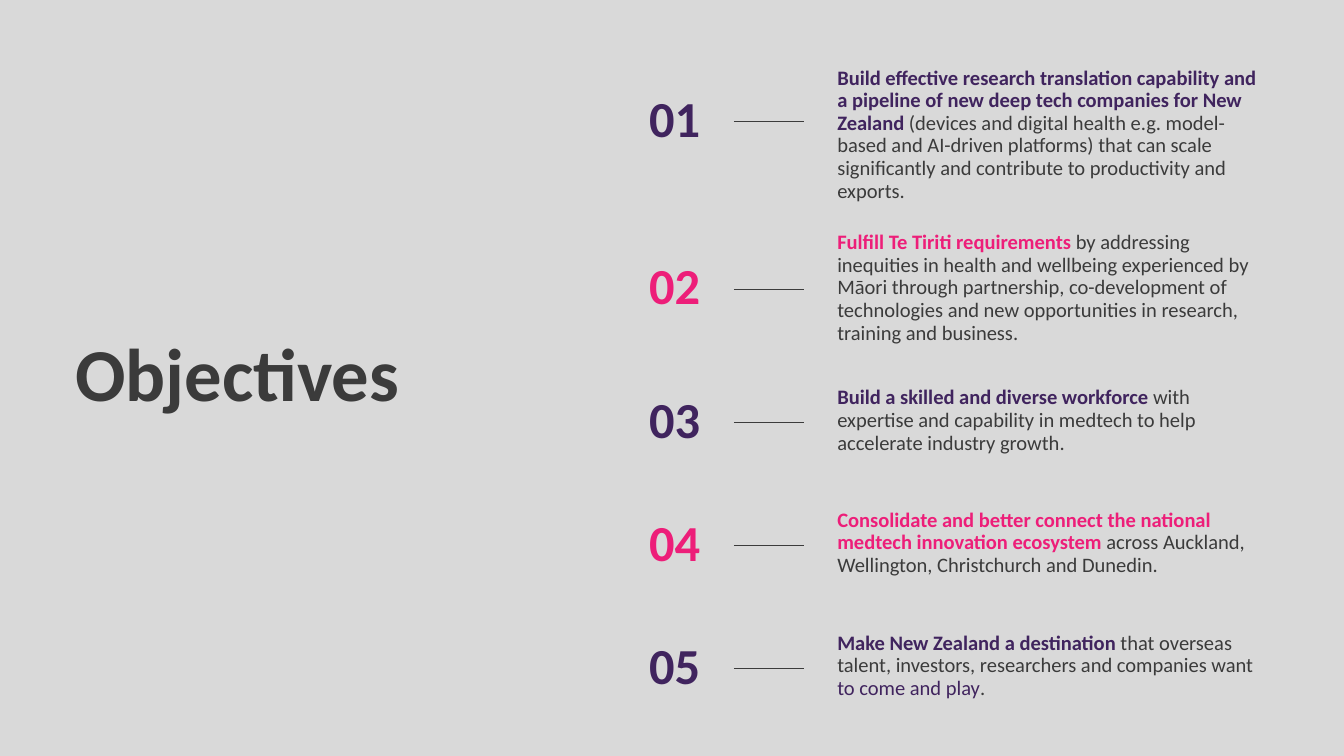
from dataclasses import dataclass

from lxml import etree
from pptx import Presentation, util as u
from pptx.dml.color import RGBColor
from pptx.enum import shapes, text
from pptx.oxml.ns import qn


@dataclass(frozen=True)
class Theme:
    font: str = "Calibri"
    background: str = "D9D9D9"
    ink: str = "3B3B3B"
    purple: str = "40245E"
    pink: str = "ED1E79"
    title_size: float = 80
    title_leading: float = 77
    number_size: float = 54
    number_leading: float = 55
    body_size: float = 22
    body_leading: float = 24.2
    rule_width: float = 0.75


THEME = Theme()

NUMBER_LEFT, NUMBER_WIDTH, NUMBER_HEIGHT = 9.66, 1.04, 0.79
RULE_LEFT, RULE_RIGHT, RULE_OFFSET = 10.92, 11.96, 0.38
BODY_LEFT, BODY_WIDTH = 12.46, 6.41

# Number top, body top, body height, then (wording, colour, bold) for each run;
# the first run is the bold lead and also sets the colour of the number.
OBJECTIVES = [
    (1.43, 0.99, 1.68, [
        ("Build effective research translation capability and a pipeline of "
         "new deep tech companies for New Zealand ", THEME.purple, True),
        ("(devices and digital health e.g. model-based and AI-driven platforms) "
         "that can scale significantly and contribute to productivity and "
         "exports.", THEME.ink, False)]),
    (3.92, 3.44, 1.73, [
        ("Fulfill Te Tiriti requirements ", THEME.pink, True),
        ("by addressing inequities in health and wellbeing experienced by Māori "
         "through partnership, co-development of technologies and new "
         "opportunities in research, training and business.", THEME.ink, False)]),
    (5.91, 5.75, 1.01, [
        ("Build a skilled and diverse workforce ", THEME.purple, True),
        ("with expertise and capability in medtech to help accelerate industry "
         "growth.", THEME.ink, False)]),
    (7.74, 7.57, 1.01, [
        ("Consolidate and better connect the national medtech innovation "
         "ecosystem ", THEME.pink, True),
        ("across Auckland, Wellington, Christchurch and Dunedin.",
         THEME.ink, False)]),
    (9.57, 9.40, 1.01, [
        ("Make New Zealand a destination ", THEME.purple, True),
        ("that overseas talent, investors, researchers and companies want ",
         THEME.ink, False),
        ("to come and play", THEME.purple, False),
        (".", THEME.ink, False)]),
]


class SlideBuilder:
    def __init__(self, slide, theme):
        self.slide = slide
        self.theme = theme

    def background(self):
        fill = self.slide.background.fill
        fill.solid()
        fill.fore_color.rgb = RGBColor.from_string(self.theme.background)

    def text_box(self, left, top, width, height, runs, size, leading):
        """Add one paragraph of (wording, colour, bold) runs, without insets."""
        shape = self.slide.shapes.add_textbox(
            u.Inches(left), u.Inches(top), u.Inches(width), u.Inches(height))
        frame = shape.text_frame
        frame.margin_left = frame.margin_right = 0
        frame.margin_top = frame.margin_bottom = 0
        frame.word_wrap = True
        frame.auto_size = text.MSO_AUTO_SIZE.SHAPE_TO_FIT_TEXT
        paragraph = frame.paragraphs[0]
        paragraph.line_spacing = u.Pt(leading)
        for wording, colour, bold in runs:
            run = paragraph.add_run()
            run.text = wording
            run.font.name = self.theme.font
            run.font.size = u.Pt(size)
            run.font.bold = bold
            run.font.color.rgb = RGBColor.from_string(colour)

    def rule(self, left, right, y):
        connector = self.slide.shapes.add_connector(
            shapes.MSO_CONNECTOR.STRAIGHT,
            u.Inches(left), u.Inches(y), u.Inches(right), u.Inches(y))
        connector.line.color.rgb = RGBColor.from_string(self.theme.ink)
        connector.line.width = u.Pt(self.theme.rule_width)
        etree.SubElement(connector._element.spPr, qn("a:effectLst"))

    def title(self, wording):
        self.text_box(1.12, 5.13, 7.67, 1.11, [(wording, self.theme.ink, True)],
                      self.theme.title_size, self.theme.title_leading)

    def objective(self, number, number_top, body_top, body_height, runs):
        lead_colour = runs[0][1]
        self.text_box(NUMBER_LEFT, number_top, NUMBER_WIDTH, NUMBER_HEIGHT,
                      [(f"{number:02d}", lead_colour, True)],
                      self.theme.number_size, self.theme.number_leading)
        self.rule(RULE_LEFT, RULE_RIGHT, number_top + RULE_OFFSET)
        self.text_box(BODY_LEFT, body_top, BODY_WIDTH, body_height, runs,
                      self.theme.body_size, self.theme.body_leading)


def main():
    presentation = Presentation()
    presentation.slide_width = u.Inches(20)
    presentation.slide_height = u.Inches(11.25)
    slide = presentation.slides.add_slide(presentation.slide_layouts[6])

    builder = SlideBuilder(slide, THEME)
    builder.background()
    builder.title("Objectives")
    for number, objective in enumerate(OBJECTIVES, start=1):
        builder.objective(number, *objective)

    presentation.save("out.pptx")


if __name__ == "__main__":
    main()
